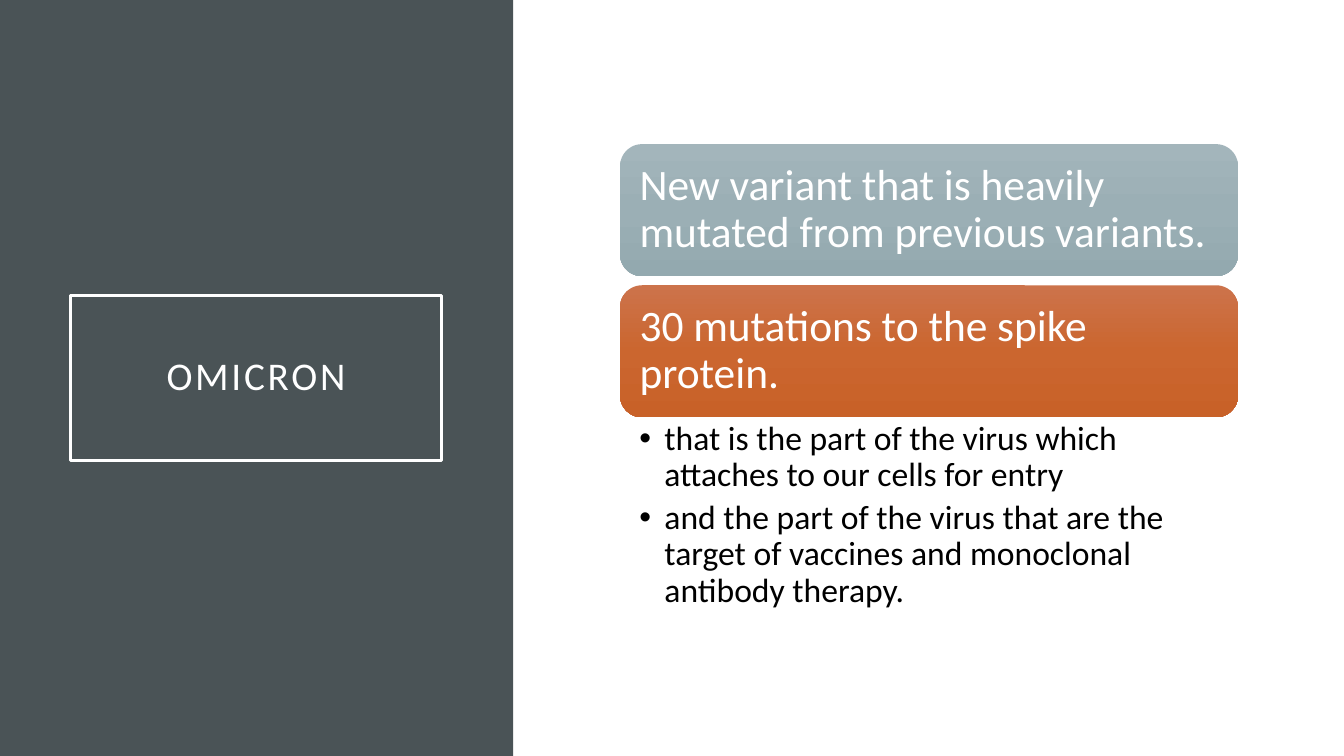
import copy

import pptx
import pptx.dml.color
import pptx.enum.shapes
import pptx.enum.text
import pptx.oxml
import pptx.oxml.ns
import pptx.util

Inches, Pt = pptx.util.Inches, pptx.util.Pt
RGB = pptx.dml.color.RGBColor.from_string
SHAPE = pptx.enum.shapes.MSO_SHAPE
ALIGN = pptx.enum.text.PP_ALIGN
ANCHOR = pptx.enum.text.MSO_ANCHOR

COLORS = {
    "panel": "4A5356",
    "white": "FFFFFF",
    "black": "000000",
    "grey card": ["A3B5BB", "9BAFB5", "93A9AF"],
    "orange card": ["CC734B", "CB662F", "C86128"],
}


def set_frame(tf, anchor, left, top, right, bottom):
    """Set wrapping, anchor and insets (inches) of a text frame."""
    tf.word_wrap = True
    tf.auto_size = pptx.enum.text.MSO_AUTO_SIZE.NONE
    tf.vertical_anchor = anchor
    tf.margin_left, tf.margin_top = Inches(left), Inches(top)
    tf.margin_right, tf.margin_bottom = Inches(right), Inches(bottom)


def style_paragraph(p, size, color, align):
    p.alignment = align
    p.line_spacing = 0.9
    p.space_before = Pt(0)
    p.font.name = "Calibri"
    p.font.size = Pt(size)
    p.font.color.rgb = RGB(color)


prs = pptx.Presentation()
prs.slide_width, prs.slide_height = Inches(13.33), Inches(7.5)
s = prs.slides.add_slide(prs.slide_layouts[1])
title, body = s.shapes.title, s.placeholders[1]

# Left panel, behind the title
panel = s.shapes.add_shape(SHAPE.RECTANGLE, 0, 0, Inches(5.09), prs.slide_height)
panel.shadow.inherit = False
panel.fill.solid()
panel.fill.fore_color.rgb = RGB(COLORS["panel"])
panel.line.fill.background()
title._element.addprevious(panel._element)

# Framed title
title.left, title.top = Inches(0.7), Inches(2.93)
title.width, title.height = Inches(3.68), Inches(1.64)
title.line.color.rgb = RGB(COLORS["white"])
title.line.width = Pt(2.5)
tf = title.text_frame
tf.text = "OMICRON"
set_frame(tf, ANCHOR.MIDDLE, 0.2, 0.2, 0.2, 0.2)
style_paragraph(tf.paragraphs[0], 28, COLORS["white"], ALIGN.CENTER)
tf.paragraphs[0].runs[0].font._element.set("spc", "200")

# Gradient cards
cards = [
    ("New variant that is heavily mutated from previous variants.", "grey card"),
    ("30 mutations to the spike protein.", "orange card"),
]
for i, (text, name) in enumerate(cards):
    sp = s.shapes.add_shape(SHAPE.ROUNDED_RECTANGLE, Inches(6.15), Inches(1.43 + 1.4 * i),
                            Inches(6.13), Inches(1.31))
    sp.shadow.inherit = False
    sp.line.fill.background()
    sp.fill.gradient()
    sp.fill.gradient_angle = 270
    stops = sp._element.spPr.find(".//" + pptx.oxml.ns.qn("a:gsLst"))
    stops.insert(1, copy.deepcopy(stops[0]))
    for stop, position, color in zip(sp.fill.gradient_stops, (0, 0.5, 1), COLORS[name]):
        stop.position = position
        stop.color.rgb = RGB(color)
    tf = sp.text_frame
    tf.text = text
    set_frame(tf, ANCHOR.MIDDLE, 0.13, 0.13, 0.13, 0.13)
    style_paragraph(tf.paragraphs[0], 31, COLORS["white"], ALIGN.LEFT)

# Bulleted details under the second card
body.left, body.top = Inches(6.15), Inches(4.14)
body.width, body.height = Inches(6.13), Inches(1.93)
tf = body.text_frame
tf.text = ("that is the part of the virus which attaches to our cells for entry\n"
           "and the part of the virus that are the target of vaccines and "
           "monoclonal antibody therapy.")
set_frame(tf, ANCHOR.TOP, 0.19, 0.04, 0.24, 0.04)
for p in tf.paragraphs:
    style_paragraph(p, 24, COLORS["black"], ALIGN.LEFT)
    p.space_after = Pt(4.8)
    pPr = p._p.get_or_add_pPr()
    pPr.set("marL", str(Inches(0.25)))
    pPr.set("indent", str(-Inches(0.25)))
    bullet = pptx.oxml.parse_xml(f'<a:buChar {pptx.oxml.ns.nsdecls("a")} char="•"/>')
    pPr.find(pptx.oxml.ns.qn("a:defRPr")).addprevious(bullet)

prs.save("out.pptx")
